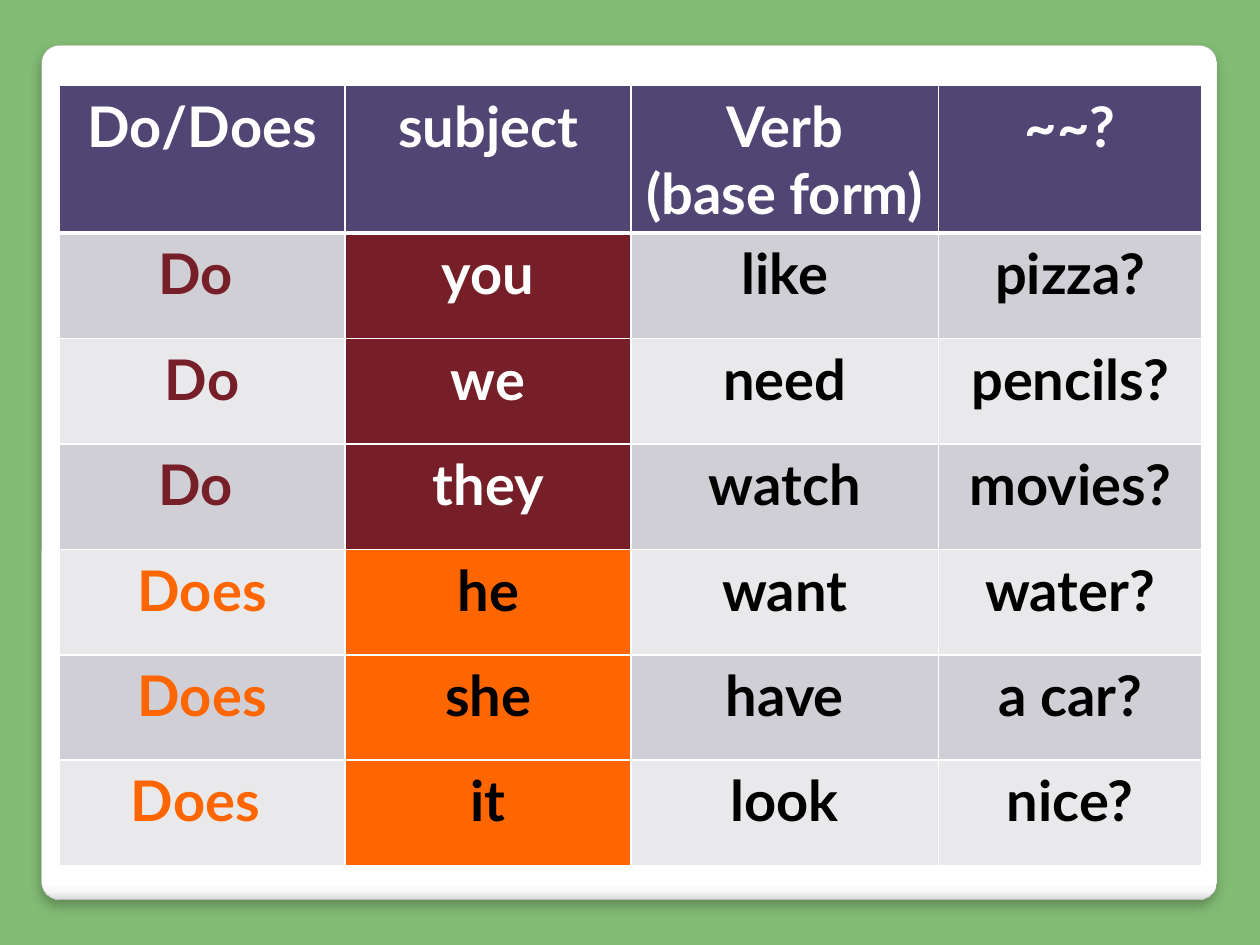
from pptx import Presentation
from pptx import util as u
from pptx.dml.color import RGBColor
from pptx.enum import shapes, text
from pptx.oxml import parse_xml
from pptx.oxml.ns import nsdecls, qn

GREEN, WHITE, BLACK = "82BB74", "FFFFFF", "000000"
PURPLE, MAROON, ORANGE = "514573", "771F28", "FF6600"
BANDS = ["D0CFD5", "E9E9EB"]
COLUMN_WIDTHS = [2.27, 2.27, 2.44, 2.09]
HEADER_HEIGHT = 1.17
HEADER = ["Do/Does", "subject", "Verb\n(base form)", "~~?"]
QUESTIONS = [
    ["Do ", "you", "like", "pizza?"],
    ["Do", "we", "need", "pencils?"],
    ["Do ", "they", "watch", "movies?"],
    ["Does", "he", "want", "water?"],
    ["Does", "she", "have", "a car?"],
    ["Does ", "it", "look", "nice?"],
]


def rgb(color):
    return RGBColor.from_string(color)


def paint(fill, color):
    fill.solid()
    fill.fore_color.rgb = rgb(color)


def add_card(slide, left, top, width, height):
    shape = slide.shapes.add_shape(
        shapes.MSO_SHAPE.ROUNDED_RECTANGLE,
        u.Inches(left), u.Inches(top), u.Inches(width), u.Inches(height))
    shape.adjustments[0] = 0.021
    shape.line.color.rgb = rgb("A4A4A4")
    shape.line.width = u.Pt(0.16)
    shape.shadow.inherit = False
    properties = shape.fill._xPr
    stops = "".join(
        f'<a:gs pos="{position * 1000}"><a:srgbClr val="{color}"/></a:gs>'
        for position, color in [(0, WHITE), (98, WHITE), (99, "F7F7F7"), (100, "DADADA")])
    gradient = parse_xml(
        f'<a:gradFill {nsdecls("a")} rotWithShape="1"><a:gsLst>{stops}</a:gsLst>'
        '<a:lin ang="5400000" scaled="0"/></a:gradFill>')
    properties.find(qn("a:prstGeom")).addnext(gradient)
    properties.find(qn("a:effectLst")).append(parse_xml(
        f'<a:outerShdw {nsdecls("a")} blurRad="{u.Pt(6)}" dist="{u.Pt(4)}" '
        f'dir="5400000" algn="t" rotWithShape="0"><a:srgbClr val="{BLACK}">'
        '<a:alpha val="25000"/></a:srgbClr></a:outerShdw>'))


def add_borders(cell, widths):
    properties = cell._tc.get_or_add_tcPr()
    for side, width in widths.items():
        properties.append(parse_xml(
            f'<a:ln{side} {nsdecls("a")} w="{u.Pt(width)}"><a:solidFill>'
            f'<a:srgbClr val="{WHITE}"/></a:solidFill></a:ln{side}>'))


def fill_cell(cell, words, fill, color, borders):
    add_borders(cell, borders)
    paint(cell.fill, fill)
    cell.text = words
    font_format = {"name": "Lato", "size": u.Pt(32), "bold": True}
    for paragraph in cell.text_frame.paragraphs:
        paragraph.alignment = text.PP_ALIGN.CENTER
        font = paragraph.runs[0].font
        for name, value in font_format.items():
            setattr(font, name, value)
        font.color.rgb = rgb(color)


def add_question_table(slide, left, top, width, height):
    table = slide.shapes.add_table(
        len(QUESTIONS) + 1, len(HEADER),
        u.Inches(left), u.Inches(top), u.Inches(width), u.Inches(height)).table
    table.first_row = table.horz_banding = False
    for column, column_width in zip(table.columns, COLUMN_WIDTHS):
        column.width = u.Inches(column_width)
    row_height = (height - HEADER_HEIGHT) / len(QUESTIONS)
    for index, row in enumerate(table.rows):
        row.height = u.Inches(row_height if index else HEADER_HEIGHT)

    thin = {"L": 1, "R": 1, "T": 1, "B": 1}
    for column, words in enumerate(HEADER):
        fill_cell(table.cell(0, column), words, PURPLE, WHITE, {**thin, "B": 3})
    for index, question in enumerate(QUESTIONS):
        band = BANDS[index % 2]
        plural = question[0].strip() == "Do"
        accent, subject_color = (MAROON, WHITE) if plural else (ORANGE, BLACK)
        fills = [band, accent, band, band]
        colors = [accent, subject_color, BLACK, BLACK]
        borders = thin if index else {**thin, "T": 3}
        for column, (words, fill, color) in enumerate(zip(question, fills, colors)):
            fill_cell(table.cell(index + 1, column), words, fill, color, borders)


def main():
    presentation = Presentation()
    presentation.slide_width = u.Inches(10)
    presentation.slide_height = u.Inches(7.5)
    slide = presentation.slides.add_slide(presentation.slide_layouts[6])
    paint(slide.background.fill, GREEN)
    add_card(slide, 0.33, 0.36, 9.33, 6.78)
    add_question_table(slide, 0.47, 0.68, 9.06, 6.19)
    presentation.save("out.pptx")


if __name__ == "__main__":
    main()
